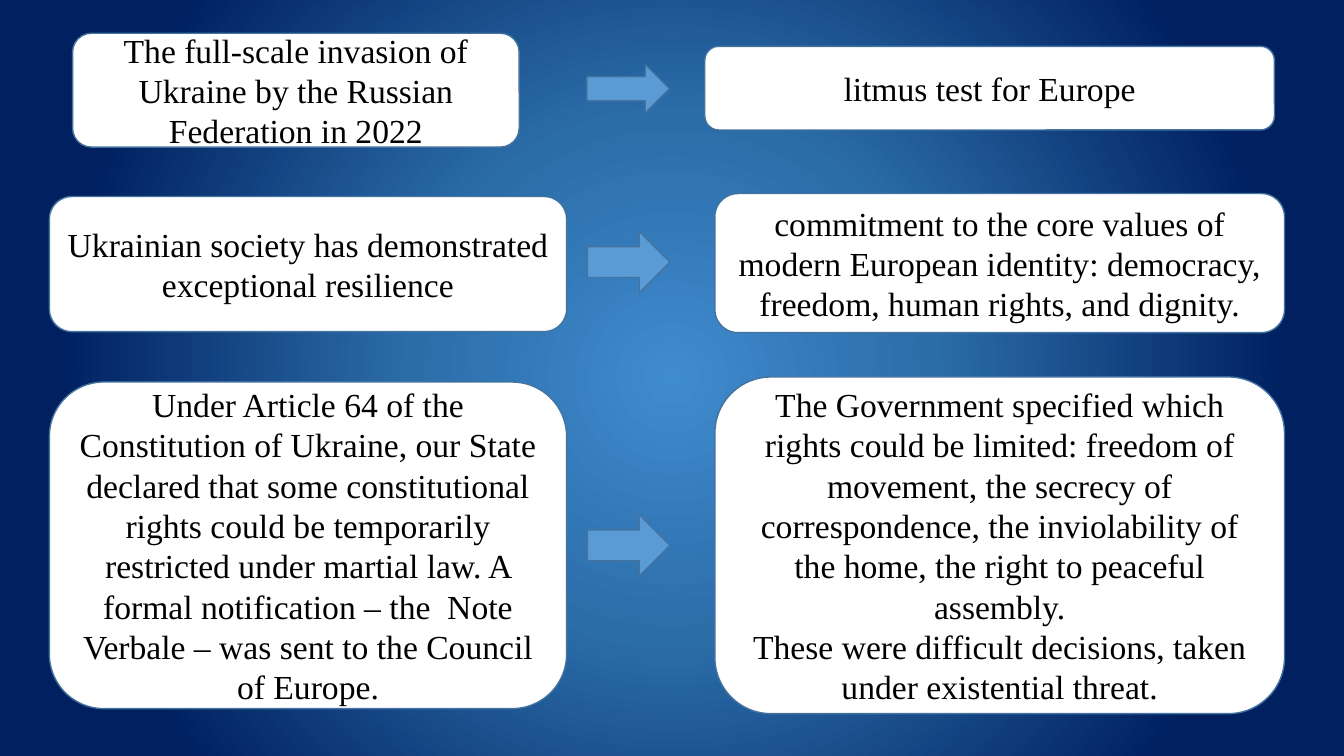
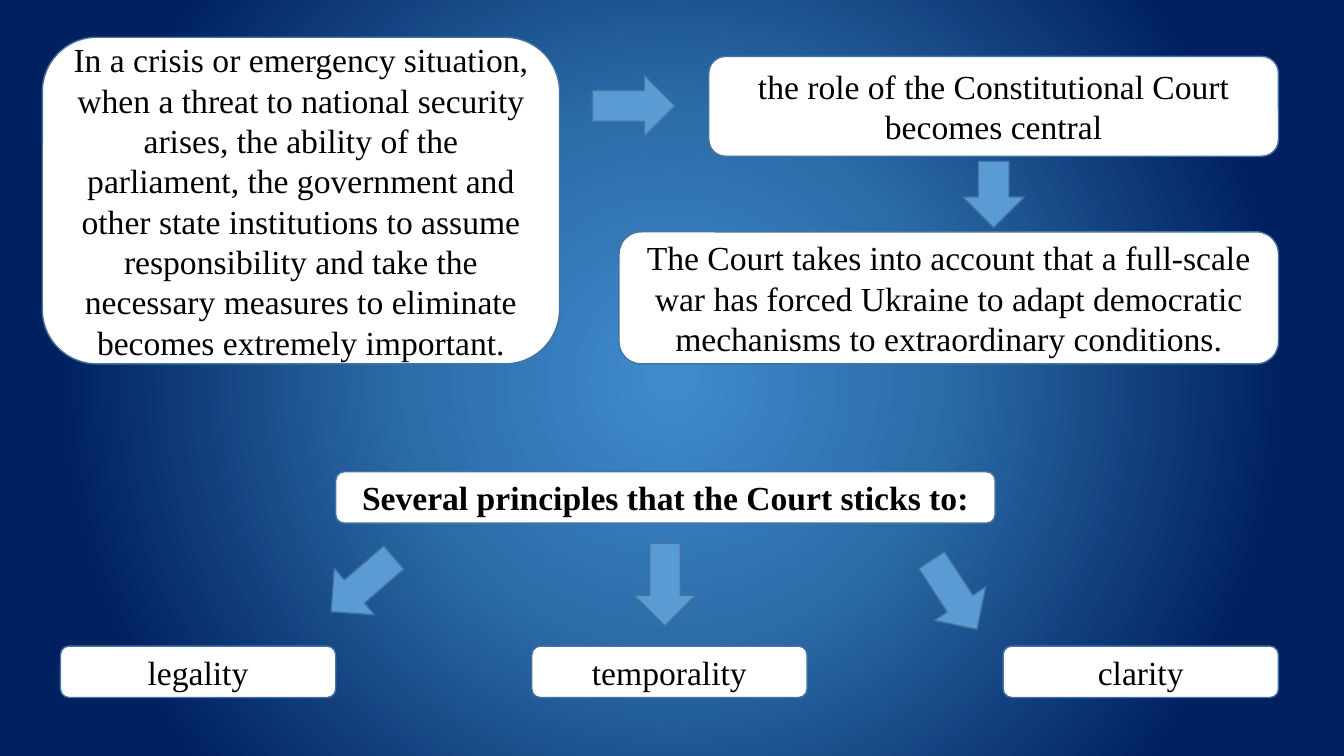
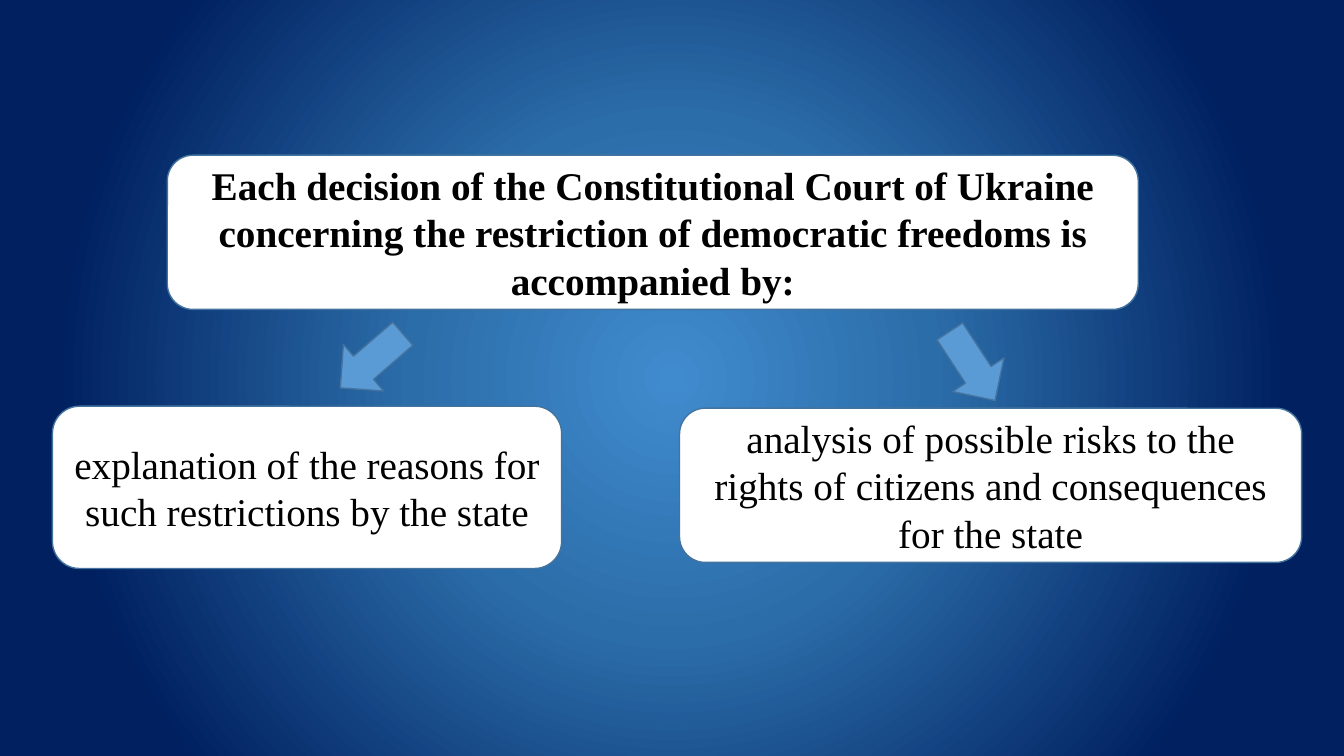
"""Build three slides on democratic rights and the Constitutional Court in wartime."""
from lxml import etree
from pptx import Presentation, util as u
from pptx.dml import color
from pptx.enum import shapes, text
from pptx.oxml import ns

HUES = {"box": "FFFFFF", "arrow": "5B9BD5", "edge": "43739E", "ink": "000000",
        "core": "408BCE", "mid": "2B6DA9", "rim": "002060"}
STOPS = [("core", 0), ("mid", 34), ("rim", 80)]
WIDE, TALL = 0.61, 0.82
LEFT_TURN, RIGHT_TURN = 49.1, 326.8


def put(slide, kind, spot, hue):
    shape = slide.shapes.add_shape(kind, *[u.Inches(n) for n in spot])
    shape.shadow.inherit = False
    shape.fill.solid()
    shape.fill.fore_color.rgb = color.RGBColor.from_string(HUES[hue])
    shape.line.color.rgb = color.RGBColor.from_string(HUES["edge"])
    shape.line.width = u.Pt(1)
    return shape


def box(slide, spot, words, size=24, bold=False):
    frame = put(slide, shapes.MSO_SHAPE.ROUNDED_RECTANGLE, spot, "box").text_frame
    frame.text = words
    for name, value in {"word_wrap": True, "vertical_anchor": text.MSO_ANCHOR.MIDDLE}.items():
        setattr(frame, name, value)
    look = {"name": "Times New Roman", "size": u.Pt(size), "bold": bold}
    for para in frame.paragraphs:
        para.alignment = text.PP_ALIGN.CENTER
        for run in para.runs:
            for name, value in look.items():
                setattr(run.font, name, value)
            run.font.color.rgb = color.RGBColor.from_string(HUES["ink"])


deck = Presentation()
deck.slide_width, deck.slide_height = u.Inches(13.33), u.Inches(7.5)

master = deck.slide_master
master.background.fill.gradient()
grad = master.element.find(".//" + ns.qn("a:gradFill"))
for child in list(grad):
    grad.remove(child)
stops = etree.SubElement(grad, ns.qn("a:gsLst"))
for hue, place in STOPS:
    stop = etree.SubElement(stops, ns.qn("a:gs"), pos=str(place * 1000))
    etree.SubElement(stop, ns.qn("a:srgbClr"), val=HUES[hue])
glow = etree.SubElement(grad, ns.qn("a:path"), path="circle")
etree.SubElement(glow, ns.qn("a:fillToRect"), {side: "50000" for side in "ltrb"})

rights, court, ruling = [deck.slides.add_slide(deck.slide_layouts[6]) for _ in range(3)]

BOXES = [
    (rights, (0.72, 0.33, 4.43, 1.13),
     "The full-scale invasion of Ukraine by the Russian Federation in 2022"),
    (rights, (6.99, 0.46, 5.65, 0.83), "litmus test for Europe"),
    (rights, (0.49, 1.95, 5.13, 1.34),
     "Ukrainian society has demonstrated exceptional resilience"),
    (rights, (7.09, 1.92, 5.65, 1.38),
     "commitment to the core values of modern European identity: democracy, "
     "freedom, human rights, and dignity."),
    (rights, (0.49, 3.79, 5.13, 3.24),
     "Under Article 64 of the Constitution of Ukraine, our State declared that some "
     "constitutional rights could be temporarily restricted under martial law. A formal "
     "notification – the  Note Verbale – was sent to the Council of Europe."),
    (rights, (7.09, 3.74, 5.65, 3.34),
     "The Government specified which rights could be limited: freedom of movement, "
     "the secrecy of correspondence, the inviolability of the home, the right to "
     "peaceful assembly.\n"
     "These were difficult decisions, taken under existential threat."),
    (court, (0.42, 0.37, 5.13, 3.24),
     "In a crisis or emergency situation, when a threat to national security arises, "
     "the ability of the parliament, the government and other state institutions to "
     "assume responsibility and take the necessary measures to eliminate becomes "
     "extremely important."),
    (court, (7.03, 0.56, 5.65, 0.99), "the role of the Constitutional Court becomes central"),
    (court, (6.14, 2.3, 6.54, 1.31),
     "The Court takes into account that a full-scale war has forced Ukraine to adapt "
     "democratic mechanisms to extraordinary conditions."),
    (court, (3.33, 4.68, 6.54, 0.51), "Several principles that the Court sticks to:", 24, True),
    (ruling, (1.66, 1.54, 9.63, 1.53),
     "Each decision of the Constitutional Court of Ukraine concerning the restriction "
     "of democratic freedoms is accompanied by:", 28, True),
    (ruling, (0.52, 4.03, 5.05, 1.61),
     "explanation of the reasons for such restrictions by the state", 28),
    (ruling, (6.74, 4.05, 6.17, 1.53),
     "analysis of possible risks to the rights of citizens and consequences for the state", 28),
]
for item in BOXES:
    box(*item)

first, last, width = 0.6, 9.95, 2.73
for i, word in enumerate(["legality", "temporality", "clarity"]):
    box(court, (first + i * (last - first) / 2, 6.41, width, 0.51), word)

ARROWS = [
    (rights, (5.99, 0.47, 0.48, TALL), 270),
    (rights, (5.93, 2.19, WIDE, TALL), 270),
    (rights, (5.93, 5, WIDE, TALL), 270),
    (court, (5.98, 0.64, WIDE, TALL), 270),
    (court, (9.55, 1.6, WIDE, 0.66), 0),
    (court, (3.29, 5.39, WIDE, TALL), LEFT_TURN),
    (court, (6.29, 5.39, WIDE, TALL), 0),
    (court, (9.16, 5.49, WIDE, TALL), RIGHT_TURN),
    (ruling, (3.38, 3.17, WIDE, TALL), LEFT_TURN),
    (ruling, (9.34, 3.22, WIDE, TALL), RIGHT_TURN),
]
for slide, spot, turn in ARROWS:
    put(slide, shapes.MSO_SHAPE.DOWN_ARROW, spot, "arrow").rotation = turn

deck.save("out.pptx")
